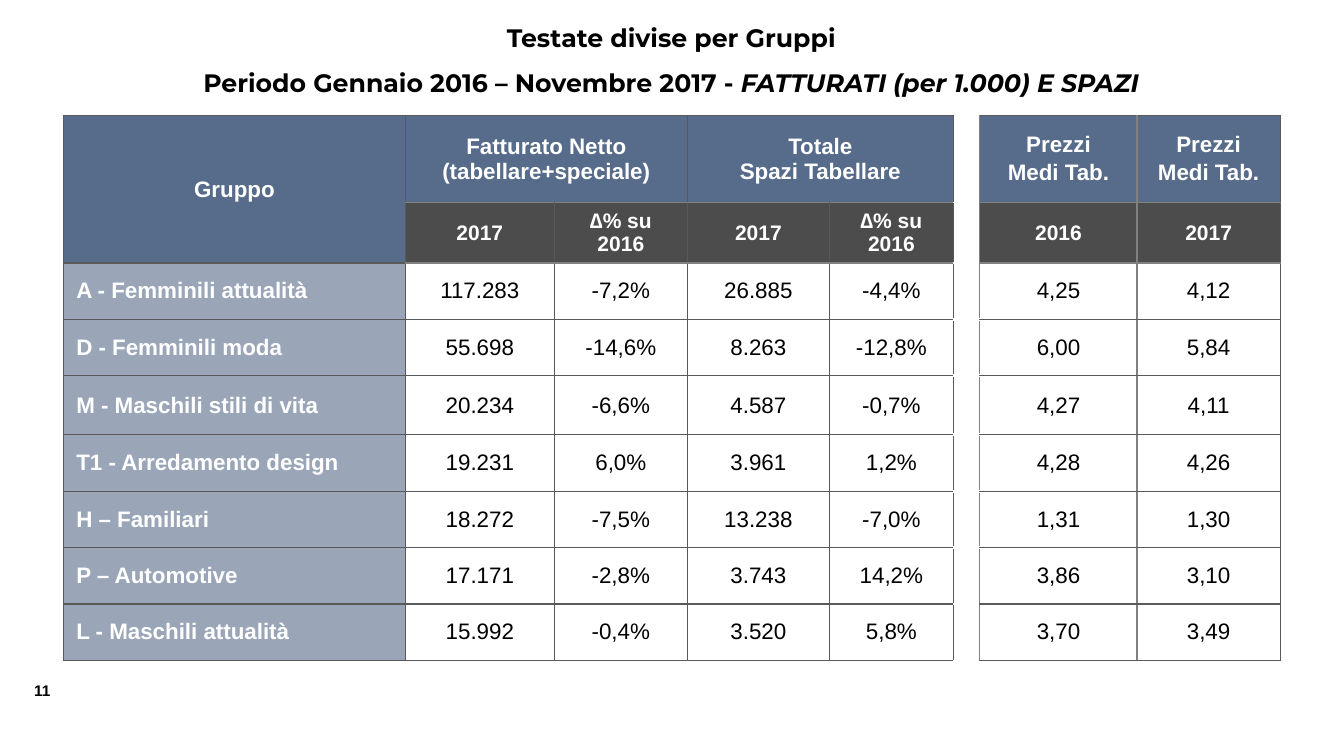
from dataclasses import dataclass

from lxml import etree
from pptx import Presentation
from pptx import util as u
from pptx.dml import color
from pptx.enum import text
from pptx.oxml import ns

Pt = u.Pt
COLOURS = {
    "blue": "576B8A",
    "black": "000000",
    "white": "FFFFFF",
    "dark line": "595959",
    "grey line": "808080",
}
COLUMN_WIDTHS = [244, 106.5, 95, 101.5, 88.5, 19, 112.3, 102.2]
ROW_HEIGHTS = [62, 43.2, 40.3, 40.3, 42.2, 40.3, 40.3, 40.3, 40.3]
GAP_COLUMN = 5
HEADER_ROWS = 2

GROUP_HEADERS = {
    0: ["Gruppo"],
    1: ["Fatturato Netto (tabellare+speciale)"],
    3: ["Totale", "Spazi Tabellare"],
    6: ["Prezzi", "Medi Tab."],
    7: ["Prezzi", "Medi Tab."],
}
YEAR_HEADERS = ["", "2017", "∆% su 2016", "2017", "∆% su 2016", "", "2016", "2017"]
GROUPS = [
    ["A - Femminili attualità", "117.283", "-7,2%", "26.885", "-4,4%", "", "4,25", "4,12"],
    ["D - Femminili moda", "55.698", "-14,6%", "8.263", "-12,8%", "", "6,00", "5,84"],
    ["M - Maschili stili di vita", "20.234", "-6,6%", "4.587", "-0,7%", "", "4,27", "4,11"],
    ["T1 - Arredamento design", "19.231", "6,0%", "3.961", "1,2%", "", "4,28", "4,26"],
    ["H – Familiari", "18.272", "-7,5%", "13.238", "-7,0%", "", "1,31", "1,30"],
    ["P – Automotive", "17.171", "-2,8%", "3.743", "14,2%", "", "3,86", "3,10"],
    ["L - Maschili attualità", "15.992", "-0,4%", "3.520", "5,8%", "", "3,70", "3,49"],
]


@dataclass(frozen=True)
class CellStyle:
    fill: str | None
    opacity: int = 100
    font: str = "white"
    bold: bool = True
    size: float = 16
    align: text.PP_ALIGN = text.PP_ALIGN.CENTER
    margin_x: float = 0
    margin_y: float = 0
    gap: float = 0


TOP_HEADER = CellStyle("blue", margin_x=7.2, margin_y=3.6)
PRICE_HEADER = CellStyle("blue", margin_x=7.2, margin_y=3.6, gap=2)
YEAR_HEADER = CellStyle("black", opacity=70, size=15, margin_x=7.2, margin_y=3.6)
GROUP_NAME = CellStyle("blue", opacity=60, align=text.PP_ALIGN.LEFT, margin_x=9)
FIGURE = CellStyle(None, font="black", bold=False)
GAP = CellStyle("white")


def rgb(name: str) -> color.RGBColor:
    return color.RGBColor.from_string(COLOURS[name])


def style_for(row: int, column: int) -> CellStyle:
    if column == GAP_COLUMN:
        return GAP
    if row == 0:
        return PRICE_HEADER if column > GAP_COLUMN else TOP_HEADER
    if row < HEADER_ROWS:
        return YEAR_HEADER if column else TOP_HEADER
    return FIGURE if column else GROUP_NAME


def vertical_edge(edge: int) -> tuple[str, float]:
    return ("grey line" if edge in (6, 7) else "dark line"), 1


def horizontal_edge(edge: int, column: int) -> tuple[str, float]:
    if column == GAP_COLUMN:
        return "white", (2.25 if HEADER_ROWS < edge < len(ROW_HEIGHTS) else 1)
    return ("grey line" if edge in (1, 2) and column else "dark line"), 1


def set_borders(cell, row: int, column: int) -> None:
    """Put the four border lines ahead of the fill, as the schema requires."""
    edges = {
        "a:lnL": vertical_edge(column),
        "a:lnR": vertical_edge(column + 1),
        "a:lnT": horizontal_edge(row, column),
        "a:lnB": horizontal_edge(row + 1, column),
    }
    properties = cell._tc.get_or_add_tcPr()
    for position, (tag, (name, width)) in enumerate(edges.items()):
        line = etree.Element(ns.qn(tag), w=str(int(Pt(width))))
        fill = etree.SubElement(line, ns.qn("a:solidFill"))
        etree.SubElement(fill, ns.qn("a:srgbClr"), val=COLOURS[name])
        properties.insert(position, line)


def set_fill(cell, style: CellStyle) -> None:
    if style.fill is None:
        cell.fill.background()
        return
    cell.fill.solid()
    cell.fill.fore_color.rgb = rgb(style.fill)
    if style.opacity < 100:
        shade = cell._tc.tcPr.find(".//" + ns.qn("a:srgbClr"))
        etree.SubElement(shade, ns.qn("a:alpha"), val=str(style.opacity * 1000))


def set_font(para, name: str, size: float, colour: str, bold: bool = True) -> None:
    para.font.name = name
    para.font.size = Pt(size)
    para.font.bold = bold
    para.font.color.rgb = rgb(colour)


def write_cell(cell, lines: list[str], style: CellStyle) -> None:
    cell.vertical_anchor = text.MSO_ANCHOR.MIDDLE
    cell.margin_left = cell.margin_right = Pt(style.margin_x)
    cell.margin_top = cell.margin_bottom = Pt(style.margin_y)
    cell.text_frame.text = "\n".join(lines)
    for index, para in enumerate(cell.text_frame.paragraphs):
        para.alignment = style.align
        if index and style.gap:
            para.space_before = Pt(style.gap)
        set_font(para, "Arial", style.size, style.font, style.bold)


def add_title(page) -> None:
    title = page.shapes.title
    title.left, title.top, title.width, title.height = Pt(80), Pt(1.4), Pt(799), Pt(77)
    frame = title.text_frame
    frame.word_wrap = True
    frame.auto_size = text.MSO_AUTO_SIZE.NONE
    frame.vertical_anchor = text.MSO_ANCHOR.TOP
    para = frame.paragraphs[0]
    para.alignment = text.PP_ALIGN.CENTER
    para.line_spacing = 1.5
    set_font(para, "Montserrat", 18, "black")
    para.add_run().text = "Testate divise per Gruppi"
    para.add_line_break()
    para.add_run().text = "Periodo Gennaio 2016 – Novembre 2017 - "
    span = para.add_run()
    span.text = "FATTURATI (per 1.000) E SPAZI"
    span.font.italic = True


def add_groups_table(page) -> None:
    frame = page.shapes.add_table(
        len(ROW_HEIGHTS), len(COLUMN_WIDTHS), Pt(45.5), Pt(82.6),
        Pt(sum(COLUMN_WIDTHS)), Pt(sum(ROW_HEIGHTS)),
    )
    table = frame.table
    table.first_row = table.horz_banding = False
    for column, width in zip(table.columns, COLUMN_WIDTHS):
        column.width = Pt(width)
    for row, height in zip(table.rows, ROW_HEIGHTS):
        row.height = Pt(height)

    top = [GROUP_HEADERS.get(column, [""]) for column in range(len(COLUMN_WIDTHS))]
    body = [[[value] for value in row] for row in [YEAR_HEADERS, *GROUPS]]
    for row, values in enumerate([top, *body]):
        for column, lines in enumerate(values):
            cell = table.cell(row, column)
            style = style_for(row, column)
            write_cell(cell, lines, style)
            set_fill(cell, style)
            set_borders(cell, row, column)
    for start, end in [((0, 0), (1, 0)), ((0, 1), (0, 2)), ((0, 3), (0, 4))]:
        table.cell(*start).merge(table.cell(*end))


def add_page_number(page) -> None:
    box = page.shapes.add_textbox(Pt(17.3), Pt(483), Pt(30), Pt(21))
    box.text_frame.text = "11"
    set_font(box.text_frame.paragraphs[0], "Arial", 11, "black")


def main() -> None:
    deck = Presentation()
    deck.slide_width, deck.slide_height = Pt(960), Pt(540)
    page = deck.slides.add_slide(deck.slide_layouts[5])
    add_page_number(page)
    add_title(page)
    add_groups_table(page)
    deck.save("out.pptx")


if __name__ == "__main__":
    main()
